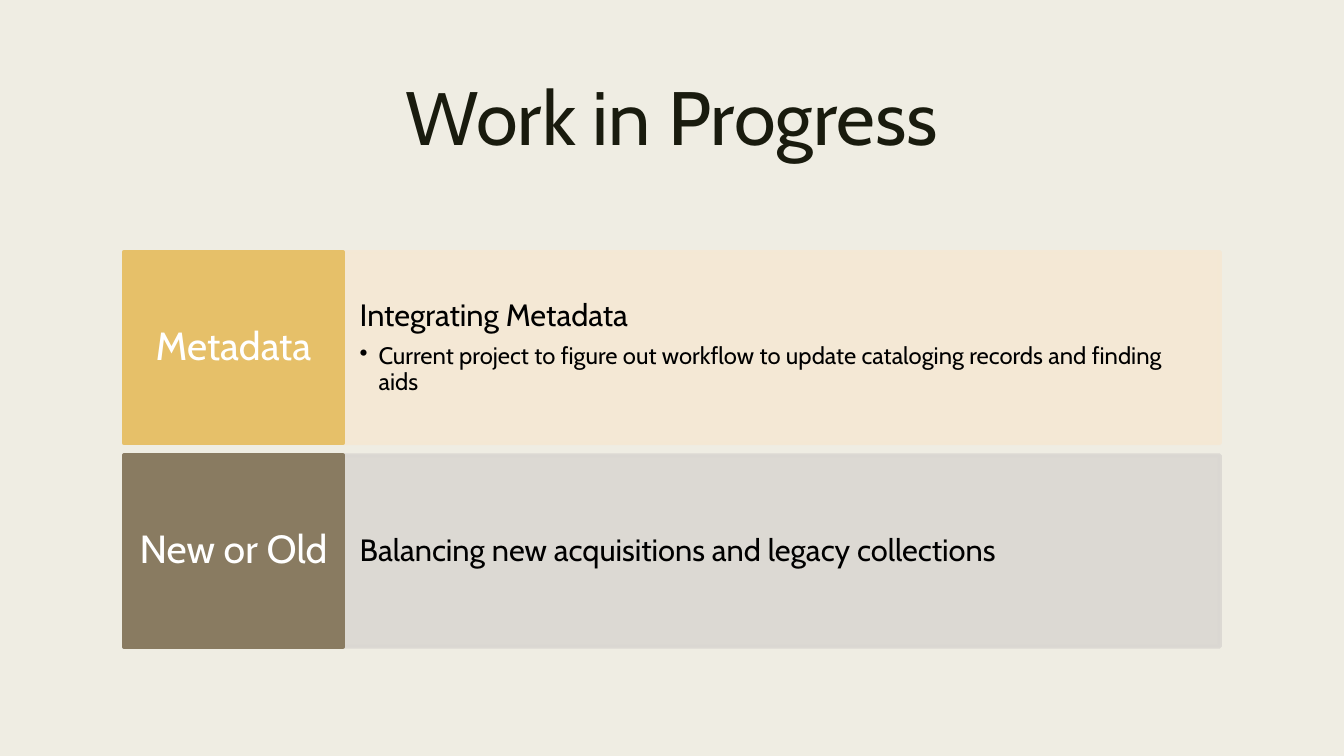
import pptx
import pptx.util
import pptx.dml.color
import pptx.enum.shapes
import pptx.enum.text
import pptx.oxml
import pptx.oxml.ns

Pt = pptx.util.Pt
RGB = pptx.dml.color.RGBColor
ALIGN = pptx.enum.text.PP_ALIGN
ANCHOR = pptx.enum.text.MSO_ANCHOR

CREAM = RGB(0xEF, 0xED, 0xE3)
INK = RGB(0x19, 0x1B, 0x0E)
BLACK = RGB(0, 0, 0)
WHITE = RGB(0xFF, 0xFF, 0xFF)
GOLD = RGB(0xE6, 0xC0, 0x69)
SAND = RGB(0xF5, 0xE8, 0xD4)
BROWN = RGB(0x89, 0x7B, 0x61)
GREY = RGB(0xDA, 0xD7, 0xD2)

FONT = "Cabin"
LABEL = {"size": 28, "color": WHITE, "align": ALIGN.CENTER, "after": 9.8}
HEAD = {"size": 22, "color": BLACK, "align": ALIGN.LEFT, "after": 7.7}
POINT = {"size": 17, "color": BLACK, "align": ALIGN.LEFT, "after": 2.5}

ROWS = [
    ("Metadata", GOLD, SAND, ANCHOR.TOP, "Integrating Metadata",
     ["Current project to figure out workflow to update cataloging "
      "records and finding aids"]),
    ("New or Old", BROWN, GREY, ANCHOR.MIDDLE,
     "Balancing new acquisitions and legacy collections", []),
]


def assign(item, values):
    for name, value in values.items():
        setattr(item, name, value)


def write(para, text, look, lead=0.9):
    assign(para, {"alignment": look["align"], "line_spacing": lead,
                  "space_before": Pt(0), "space_after": Pt(look["after"])})
    run = para.add_run()
    run.text = text
    assign(run.font, {"name": FONT, "size": Pt(look["size"])})
    run.font.color.rgb = look["color"]


def bullet(para):
    props = para._p.get_or_add_pPr()
    props.set("marL", str(Pt(13.5)))
    props.set("indent", str(-Pt(13.5)))
    mark = pptx.oxml.parse_xml(
        '<a:buChar %s char="•"/>' % pptx.oxml.ns.nsdecls("a"))
    props.append(mark)


def fade(shape, percent):
    for color in shape._element.spPr.iter(pptx.oxml.ns.qn("a:srgbClr")):
        color.append(pptx.oxml.parse_xml(
            '<a:alpha %s val="%d"/>'
            % (pptx.oxml.ns.nsdecls("a"), percent * 1000)))


def block(slide, box, color, anchor, side, edge):
    shape = slide.shapes.add_shape(
        pptx.enum.shapes.MSO_SHAPE.RECTANGLE, *map(Pt, box))
    shape.shadow.inherit = False
    shape.fill.solid()
    shape.fill.fore_color.rgb = color
    shape.line.color.rgb = color
    shape.line.width = Pt(2.75)
    assign(shape.text_frame, {
        "word_wrap": True, "vertical_anchor": anchor,
        "margin_left": Pt(side), "margin_right": Pt(side),
        "margin_top": Pt(edge), "margin_bottom": Pt(edge)})
    return shape


def title(slide, box, text):
    shape = slide.shapes.title
    assign(shape, dict(zip(("left", "top", "width", "height"), map(Pt, box))))
    assign(shape.text_frame, {"word_wrap": True,
                              "vertical_anchor": ANCHOR.TOP})
    look = {"size": 54, "color": INK, "align": ALIGN.CENTER, "after": 0}
    write(shape.text_frame.paragraphs[0], text, look, 0.89)


def row(slide, box, label, dark, pale, anchor, head, points):
    left, top, width, height = box
    split = 156.6

    # Pale panel with heading and bullets
    panel = block(slide, (left + split, top, width - split, height),
                  pale, anchor, 12, 34.5)
    fade(panel, 90)
    frame = panel.text_frame
    write(frame.paragraphs[0], head, HEAD)
    for text in points:
        para = frame.add_paragraph()
        para.level = 1
        write(para, text, POINT)
        bullet(para)

    # Dark label on the left
    tag = block(slide, (left, top, split, height),
                dark, ANCHOR.MIDDLE, 8.5, 13.5)
    write(tag.text_frame.paragraphs[0], label, LABEL)


def rows(slide, box, gap):
    left, top, width, height = box
    tall = (height - gap * (len(ROWS) - 1)) / len(ROWS)
    for index, parts in enumerate(ROWS):
        place = (left, top + index * (tall + gap), width, tall)
        row(slide, place, *parts)


def main():
    deck = pptx.Presentation()
    deck.slide_width, deck.slide_height = Pt(960), Pt(540)
    slide = deck.slides.add_slide(deck.slide_layouts[5])
    slide.background.fill.solid()
    slide.background.fill.fore_color.rgb = CREAM
    title(slide, (50.4, 54, 859, 116.6), "Work in Progress")
    rows(slide, (88.4, 180, 783, 282), 8.6)
    deck.save("out.pptx")


if __name__ == "__main__":
    main()
